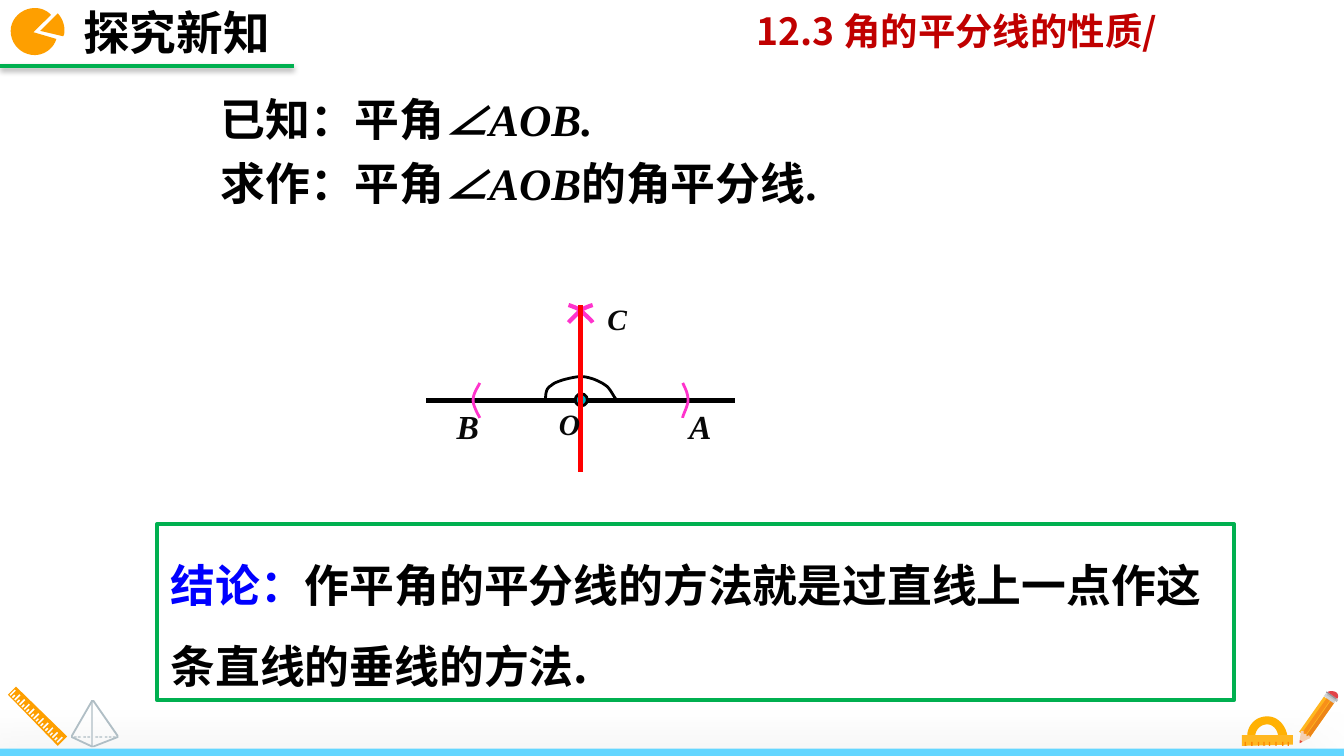
"""Build the lesson slide on bisecting a straight angle."""
from dataclasses import dataclass
from typing import NamedTuple, Optional

from lxml.etree import SubElement
from pptx import Presentation
from pptx.dml.color import RGBColor
from pptx.enum.shapes import MSO_CONNECTOR as Connector, MSO_SHAPE as Preset
from pptx.enum.text import MSO_ANCHOR as Anchor, MSO_AUTO_SIZE as AutoSize, PP_ALIGN as Align
from pptx.oxml.ns import qn
from pptx.util import Pt

PX = 9144
CURVE_STEPS = 10


@dataclass(frozen=True)
class Theme:
    black: str = "000000"
    label: str = "080808"
    red: str = "FF0000"
    crimson: str = "C00000"
    green: str = "00B050"
    blue: str = "0000FF"
    sky: str = "63D6FF"
    teal: str = "02B3C5"
    pink: str = "FF33CC"
    orange: str = "FE9F00"
    amber: str = "FFB103"
    gold: str = "FFB720"
    rust: str = "FB8501"
    steel: str = "B0BEC5"
    latin: str = "Times New Roman"
    asian: str = "Noto Sans CJK SC"
    heading: float = 25
    body: float = 24
    chapter: float = 20
    point: float = 18
    small_point: float = 15.8


class Box(NamedTuple):
    left: int
    top: int
    width: int
    height: int


class Span(NamedTuple):
    text: str
    color: str = "000000"
    italic: bool = False


class Shadow(NamedTuple):
    alpha: int
    blur: float
    distance: float
    angle: int


class Outline(NamedTuple):
    color: str
    points: tuple
    fill: bool = True
    weight: float = 0


class Label(NamedTuple):
    text: str
    box: Box
    size: float


class Bar(NamedTuple):
    box: Box
    color: str
    angle: float = 0


THEME = Theme()
deck = Presentation()
deck.slide_width, deck.slide_height = 1000 * PX, 5625 * PX // 10
page = deck.slides.add_slide(deck.slide_layouts[1])


def place(item, box: Box) -> None:
    """Move and size an object."""
    item.left, item.top, item.width, item.height = (value * PX for value in box)


def set_effect(item, shadow: Optional[Shadow] = None) -> None:
    """Replace the inherited effect with the given shadow or none."""
    effects = SubElement(item._element.spPr, qn("a:effectLst"))
    if shadow:
        outer = SubElement(effects, qn("a:outerShdw"), blurRad=str(Pt(shadow.blur)),
                           dist=str(Pt(shadow.distance)), dir=str(shadow.angle * 60000),
                           algn="t", rotWithShape="0")
        color = SubElement(outer, qn("a:srgbClr"), val=THEME.black)
        SubElement(color, qn("a:alpha"), val=str(shadow.alpha * 1000))


def paint(item, fill: Optional[str] = None, line: Optional[str] = None,
          weight: float = 0, shadow: Optional[Shadow] = None) -> None:
    """Set the fill, line and shadow of a shape."""
    if fill:
        item.fill.solid()
        item.fill.fore_color.rgb = RGBColor.from_string(fill)
    else:
        item.fill.background()
    if line:
        item.line.color.rgb = RGBColor.from_string(line)
        item.line.width = Pt(weight)
    else:
        item.line.fill.background()
    set_effect(item, shadow)


def write(item, paragraphs: list, *, size: float, font: str = THEME.latin, spacing: float = 1,
          wrap: bool = True, anchor=Anchor.TOP, align=Align.LEFT) -> None:
    """Fill a text frame with bold formatted paragraphs."""
    frame = item.text_frame
    frame.auto_size, frame.word_wrap, frame.vertical_anchor = AutoSize.NONE, wrap, anchor
    for index, spans in enumerate(paragraphs):
        para = frame.add_paragraph() if index else frame.paragraphs[0]
        properties = para._p.get_or_add_pPr()
        properties.set("marL", "0")
        properties.set("indent", "0")
        SubElement(properties, qn("a:buNone"))
        para.alignment, para.line_spacing, para.space_before = align, spacing, Pt(0)
        for span in spans:
            run = para.add_run()
            run.text = span.text
            run.font.size, run.font.name = Pt(size), font
            run.font.bold, run.font.italic = True, span.italic
            run.font.color.rgb = RGBColor.from_string(span.color)
            SubElement(run._r.get_or_add_rPr(), qn("a:ea"), typeface=THEME.asian)


def add_text(box: Box, paragraphs: list, **style):
    """Add a text box."""
    item = page.shapes.add_textbox(*(value * PX for value in box))
    write(item, paragraphs, **style)
    return item


def add_preset(kind, box: Box, angle: float = 0, **style):
    """Add a painted preset shape."""
    item = page.shapes.add_shape(kind, *(value * PX for value in box))
    item.rotation = angle
    paint(item, **style)
    return item


def add_line(start: tuple, end: tuple, color: str, weight: float,
             shadow: Optional[Shadow] = None) -> None:
    """Add a straight line."""
    item = page.shapes.add_connector(Connector.STRAIGHT, *(value * PX for value in start + end))
    item.line.color.rgb = RGBColor.from_string(color)
    item.line.width = Pt(weight)
    set_effect(item, shadow)


def trace(points: tuple) -> list:
    """Turn line points and six-number curves into EMU vertices."""
    vertices = [points[0]]
    for step in points[1:]:
        if len(step) == 2:
            vertices.append(step)
            continue
        (x0, y0), (x1, y1, x2, y2, x3, y3) = vertices[-1], step
        for index in range(1, CURVE_STEPS + 1):
            t = index / CURVE_STEPS
            weights = (1 - t) ** 3, 3 * t * (1 - t) ** 2, 3 * t * t * (1 - t), t ** 3
            vertices.append(tuple(sum(w * v for w, v in zip(weights, axis))
                                  for axis in ((x0, x1, x2, x3), (y0, y1, y2, y3))))
    return [(x * PX, y * PX) for x, y in vertices]


def add_outline(outline: Outline, *more: tuple) -> None:
    """Add a freeform, with further contours if given."""
    first = trace(outline.points)
    builder = page.shapes.build_freeform(*first[0])
    builder.add_line_segments(first[1:], close=outline.fill)
    for contour in map(trace, more):
        builder.move_to(*contour[0])
        builder.add_line_segments(contour[1:], close=outline.fill)
    if outline.fill:
        paint(builder.convert_to_shape(), fill=outline.color)
    else:
        paint(builder.convert_to_shape(), line=outline.color, weight=outline.weight)


def draw_corners() -> None:
    """Draw the bottom bar, protractor, pencil, ruler and pyramid."""
    add_preset(Preset.RECTANGLE, Box(0, 557, 1000, 6), fill=THEME.sky,
               shadow=Shadow(50, 35, 20, 135))
    add_outline(Outline(THEME.amber, ((934, 548), (934, 543, 938, 539, 943, 539),
                (947, 539, 951, 543, 951, 548), (958, 548), (957, 540, 951, 533, 943, 533),
                (934, 533, 928, 540, 928, 548))))
    add_outline(Outline(THEME.gold, ((924, 555), (924, 547), (962, 547), (962, 554))))
    for index in range(8):
        add_preset(Preset.RECTANGLE, Box(round(926.5 + index * 4.5), 552, 1, 3), fill=THEME.rust)
    for bar in (Bar(Box(975, 518, 9, 32), THEME.gold, 35.2),
                Bar(Box(981, 519, 3, 32), "ED8518", 35.2),
                Bar(Box(978, 517, 3, 32), "F89019", 35.2),
                Bar(Box(985, 518, 9, 3), "D1D3D4", 35.2),
                Bar(Box(987, 518, 9, 2), "BCBEC0", 35.2),
                Bar(Box(986, 517, 9, 1), "939598", 35.2)):
        add_preset(Preset.RECTANGLE, bar.box, bar.angle, fill=bar.color)
    add_outline(Outline("E24348", ((994, 515), (992, 514, 989, 514, 988, 515), (995, 520),
                                   (996, 519, 996, 516, 994, 515))))
    add_outline(Outline("F4CFB2", ((967, 551), (969, 552), (975, 549), (974, 547), (972, 548),
                                   (972, 546), (970, 546), (970, 544), (968, 544))))
    add_outline(Outline("E74C3C", ((967, 551), (967, 553), (969, 552), (968, 551))))
    notches = []
    for index in range(21):
        shift, reach = index * 7 / 4, 2 if index % 2 else 4
        notches.append(tuple((7 + shift + x, 517 + shift + y) for x, y in
                             ((0, 0), (reach, -reach), (reach + 1, 1 - reach), (1, 1))))
    add_outline(Outline(THEME.orange, ((12, 511), (6, 517), (43, 555), (50, 548))), *notches)
    for index in (0, 1, 2, 3, 5, 6, 7, 8, 9):
        add_preset(Preset.RECTANGLE, Box(round(55 + index * 3.25), 548, 2, 1), fill=THEME.steel)
    add_outline(Outline(THEME.steel, ((70, 521), (68, 521), (53, 547), (53, 549), (68, 556),
                                      (70, 556), (88, 549), (88, 547))),
                ((87, 548), (69, 555), (54, 548), (69, 522)))
    add_preset(Preset.RECTANGLE, Box(68, 521, 1, 35), fill=THEME.steel)


def draw_header() -> None:
    """Write the heading and chapter name with their line and pie."""
    title = page.shapes.title
    place(title, Box(52, -2, 160, 52))
    write(title, [[Span("探究新知")]], size=THEME.heading, wrap=False, anchor=Anchor.MIDDLE)
    add_text(Box(553, 1, 331, 44), [[Span("12.3 角的平分线的性质/", THEME.crimson)]],
             size=THEME.chapter, font=THEME.asian, wrap=False)
    add_line((0, 49), (219, 49), THEME.green, 2, Shadow(38, 3.1, 1.6, 90))
    add_outline(Outline(THEME.orange, ((38, 11), (35, 8, 31, 6, 26, 6), (16, 6, 8, 14, 8, 23),
                (8, 33, 16, 41, 26, 41), (33, 41, 40, 36, 42, 29), (25, 24))),
                ((43, 10), (30, 23), (47, 27), (48, 26, 48, 24, 48, 22), (48, 18, 46, 13, 43, 10)))


def draw_construction() -> None:
    """Draw the straight angle AOB, its compass arcs and bisector OC."""
    add_line((317, 298), (547, 298), THEME.black, 2.75)
    add_preset(Preset.OVAL, Box(428, 293, 9, 9), fill=THEME.teal, line=THEME.black, weight=1.5)
    arcs = (
        Outline(THEME.black, ((406, 298), (406, 294, 406, 289, 410, 287),
                (413, 284, 421, 282, 426, 281), (431, 280, 434, 280, 438, 281),
                (442, 282, 447, 284, 451, 287), (454, 289, 456, 294, 459, 298)), False, 1.5),
        Outline(THEME.pink, ((508, 285), (510, 289, 512, 293, 512, 298),
                             (512, 302, 508, 309, 508, 311)), False, 1.5),
        Outline(THEME.pink, ((357, 285), (355, 289, 352, 293, 352, 298),
                             (352, 302, 356, 309, 357, 311)), False, 1.5),
        Outline(THEME.pink, ((423, 227), (426, 228, 429, 229, 432, 231),
                             (435, 234, 440, 238, 441, 240)), False, 2.25),
        Outline(THEME.pink, ((441, 227), (438, 228, 435, 229, 432, 231),
                             (429, 234, 425, 238, 423, 240)), False, 2.25))
    for arc in arcs:
        add_outline(arc)
    add_line((432, 351), (432, 227), THEME.red, 2.25)
    for label in (Label("A", Box(503, 297, 40, 40), THEME.point),
                  Label("B", Box(330, 297, 40, 40), THEME.point),
                  Label("O", Box(406, 297, 31, 36), THEME.small_point),
                  Label("C", Box(442, 219, 31, 37), THEME.small_point)):
        add_text(label.box, [[Span(label.text, THEME.label, True)]], size=label.size,
                 align=Align.JUSTIFY)


def main() -> None:
    """Compose and save the slide."""
    draw_corners()
    draw_header()
    task = page.placeholders[1]
    place(task, Box(154, 55, 484, 102))
    write(task, [[Span("已知：平角"), Span("∠AOB.", italic=True)],
                 [Span("求作：平角"), Span("∠AOB", italic=True), Span("的角平分线.")]],
          size=THEME.body, spacing=1.2)
    conclusion = add_preset(Preset.RECTANGLE, Box(117, 390, 801, 131),
                            line=THEME.green, weight=2.25)
    write(conclusion, [[Span("结论：", THEME.blue),
                        Span("作平角的平分线的方法就是过直线上一点作这条直线的垂线的方法.")]],
          size=THEME.body, font=THEME.asian, spacing=1.5)
    draw_construction()
    deck.save("out.pptx")


if __name__ == "__main__":
    main()
